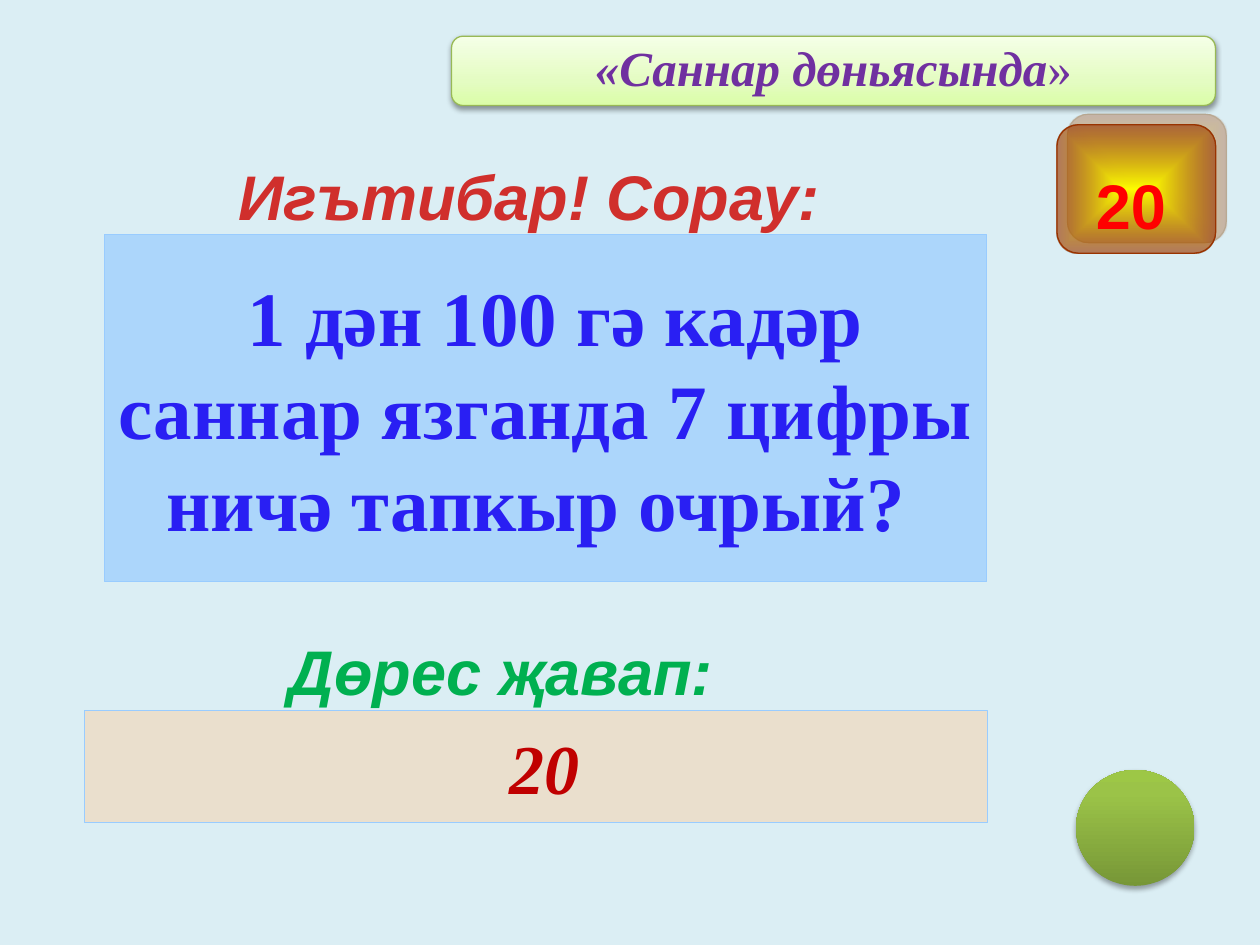
from dataclasses import dataclass
from typing import Any, Optional

import lxml.etree
import pptx
import pptx.dml.color
import pptx.enum.shapes
import pptx.enum.text
import pptx.oxml.ns
import pptx.util

Pt = pptx.util.Pt
qn = pptx.oxml.ns.qn
MSO = pptx.enum.shapes.MSO_SHAPE
ANCHOR = pptx.enum.text.MSO_ANCHOR


@dataclass
class Box:
    x: float
    y: float
    w: float
    h: float


@dataclass
class Label:
    text: str
    font: str
    size: float
    color: str
    italic: bool = True
    plain_end: str = ""
    before: float = 0
    spacing: Optional[float] = None


@dataclass
class Stop:
    pos: int
    color: str
    alpha: int = 100


@dataclass
class Shadow:
    color: str
    alpha: int
    blur: float
    dist: float
    angle: int


@dataclass
class Glossy:
    kind: Any
    box: Box
    stops: list[Stop]
    shadow: Shadow
    line: Optional[str] = None
    angle: Optional[int] = 270


@dataclass
class Heading:
    box: Box
    label: Label


def rgb(color: str) -> pptx.dml.color.RGBColor:
    return pptx.dml.color.RGBColor.from_string(color)


def node(parent: Any, tag: str, **attrs: Any) -> Any:
    values = {k: str(v) for k, v in attrs.items()}
    return lxml.etree.SubElement(parent, qn(tag), values)


def color_node(parent: Any, color: str, alpha: int) -> None:
    clr = node(parent, "a:srgbClr", val=color)
    node(clr, "a:alpha", val=alpha * 1000)


def place(sp: Any, box: Box) -> None:
    sp.left, sp.top, sp.width, sp.height = map(Pt, (box.x, box.y, box.w, box.h))


def set_line(sp: Any, color: Optional[str]) -> None:
    if color is None:
        sp.line.fill.background()
        return
    sp.line.color.rgb = rgb(color)
    sp.line.width = Pt(0.75)


def set_panel(sp: Any, color: str, alpha: int) -> None:
    sp.fill.solid()
    sp.fill.fore_color.rgb = rgb(color)
    clr = sp.fill._xPr.find(qn("a:solidFill")).find(qn("a:srgbClr"))
    node(clr, "a:alpha", val=alpha * 1000)
    set_line(sp, "99CCFF")


def write(sp: Any, label: Label, anchor: Any, wrap: bool = True) -> None:
    tf = sp.text_frame
    tf.word_wrap = wrap
    tf.auto_size = pptx.enum.text.MSO_AUTO_SIZE.NONE
    tf.vertical_anchor = anchor
    tf.margin_top = tf.margin_bottom = 0
    p = tf.paragraphs[0]
    p.alignment = pptx.enum.text.PP_ALIGN.CENTER
    p.space_before = Pt(label.before)
    if label.spacing:
        p.line_spacing = Pt(label.spacing)
    p.font.name, p.font.size = label.font, Pt(label.size)
    p.font.bold, p.font.italic = True, label.italic
    p.font.color.rgb = rgb(label.color)
    r = p.add_run()
    r.text = label.text
    if label.plain_end:
        r = p.add_run()
        r.text = label.plain_end
        r.font.bold = r.font.italic = False
    for r in p.runs:
        r.font.color.rgb = rgb(label.color)


def add_glossy(s: Any, item: Glossy) -> Any:
    sp = s.shapes.add_shape(item.kind, 0, 0, 0, 0)
    place(sp, item.box)
    sp.fill.background()
    grad = lxml.etree.Element(qn("a:gradFill"))
    stops = node(grad, "a:gsLst")
    for stop in item.stops:
        color_node(node(stops, "a:gs", pos=stop.pos * 1000), stop.color, stop.alpha)
    if item.angle is None:
        node(node(grad, "a:path", path="shape"), "a:fillToRect",
             l=50000, t=50000, r=50000, b=50000)
    else:
        node(grad, "a:lin", ang=item.angle * 60000, scaled=0)
    props = sp._element.spPr
    props.replace(props.find(qn("a:noFill")), grad)
    set_line(sp, item.line)
    sp.shadow.inherit = False
    sh = item.shadow
    outer = node(props.find(qn("a:effectLst")), "a:outerShdw", blurRad=Pt(sh.blur),
                 dist=Pt(sh.dist), dir=sh.angle * 60000, algn="ctr", rotWithShape=0)
    color_node(outer, sh.color, sh.alpha)
    return sp


def add_heading(s: Any, item: Heading) -> None:
    tb = s.shapes.add_textbox(0, 0, 0, 0)
    place(tb, item.box)
    write(tb, item.label, ANCHOR.TOP, wrap=False)


QUESTION = Label(" 1 дән 100 гә кадәр саннар язганда 7 цифры ничә тапкыр очрый? ",
                 "Times New Roman", 44, "291FF3", italic=False, spacing=53)
ANSWER = Label(" 20", "Times New Roman", 40, "C00000", before=8)
TOPIC = Label("«Саннар дөньясында", "Times New Roman", 28, "7030A0", plain_end="»")
ATTENTION = Label(" Игътибар! Сорау:", "Arial", 36, "D02F2C")

BADGE = Glossy(MSO.ROUNDED_RECTANGLE, Box(604, 71.3, 90.7, 73.4),
               [Stop(0, "FFFF00"), Stop(100, "993300", 62)],
               Shadow("996633", 50, 0, 8.5, 315), line="993300", angle=None)
BANNER = Glossy(MSO.ROUNDED_RECTANGLE, Box(258, 20.7, 436.5, 39.6),
                [Stop(0, "DAFDA7"), Stop(35, "E4FCC2"), Stop(100, "F5FFE7")],
                Shadow("000000", 38, 3.1, 1.6, 90), line="98B955")
BUTTON = Glossy(MSO.OVAL, Box(614.9, 440, 67.7, 66.2),
                [Stop(0, "779737"), Stop(80, "9BC348"), Stop(100, "9DC746")],
                Shadow("000000", 35, 3.1, 1.8, 90))

HEADINGS = [
    Heading(Box(87.8, 361.7, 396.7, 42), Label("Дөрес җавап:", "Arial", 36, "00B050")),
    Heading(Box(626.4, 95.4, 39.6, 42), Label("20", "Arial", 36, "FF0000", italic=False)),
]


def main() -> None:
    prs = pptx.Presentation()
    prs.slide_width, prs.slide_height = Pt(720), Pt(540)
    s = prs.slides.add_slide(prs.slide_layouts[0])
    s.background.fill.solid()
    s.background.fill.fore_color.rgb = rgb("DBEEF4")

    title, question = s.shapes.title, s.placeholders[1]
    place(title, Box(82, 90.2, 430.6, 42))
    write(title, ATTENTION, ANCHOR.TOP, wrap=False)
    place(question, Box(59.8, 134, 504, 198.5))
    set_panel(question, "99CCFF", 70)
    write(question, QUESTION, ANCHOR.MIDDLE)

    answer = s.shapes.add_shape(MSO.RECTANGLE, 0, 0, 0, 0)
    place(answer, Box(48.3, 406, 516, 64.2))
    set_panel(answer, "FFCC99", 42)
    answer.shadow.inherit = False
    write(answer, ANSWER, ANCHOR.MIDDLE)

    add_glossy(s, BADGE)
    banner = add_glossy(s, BANNER)
    write(banner, TOPIC, ANCHOR.MIDDLE, wrap=False)
    banner.text_frame.margin_bottom = Pt(4)
    add_glossy(s, BUTTON)
    for heading in HEADINGS:
        add_heading(s, heading)
    prs.save("out.pptx")


if __name__ == "__main__":
    main()
